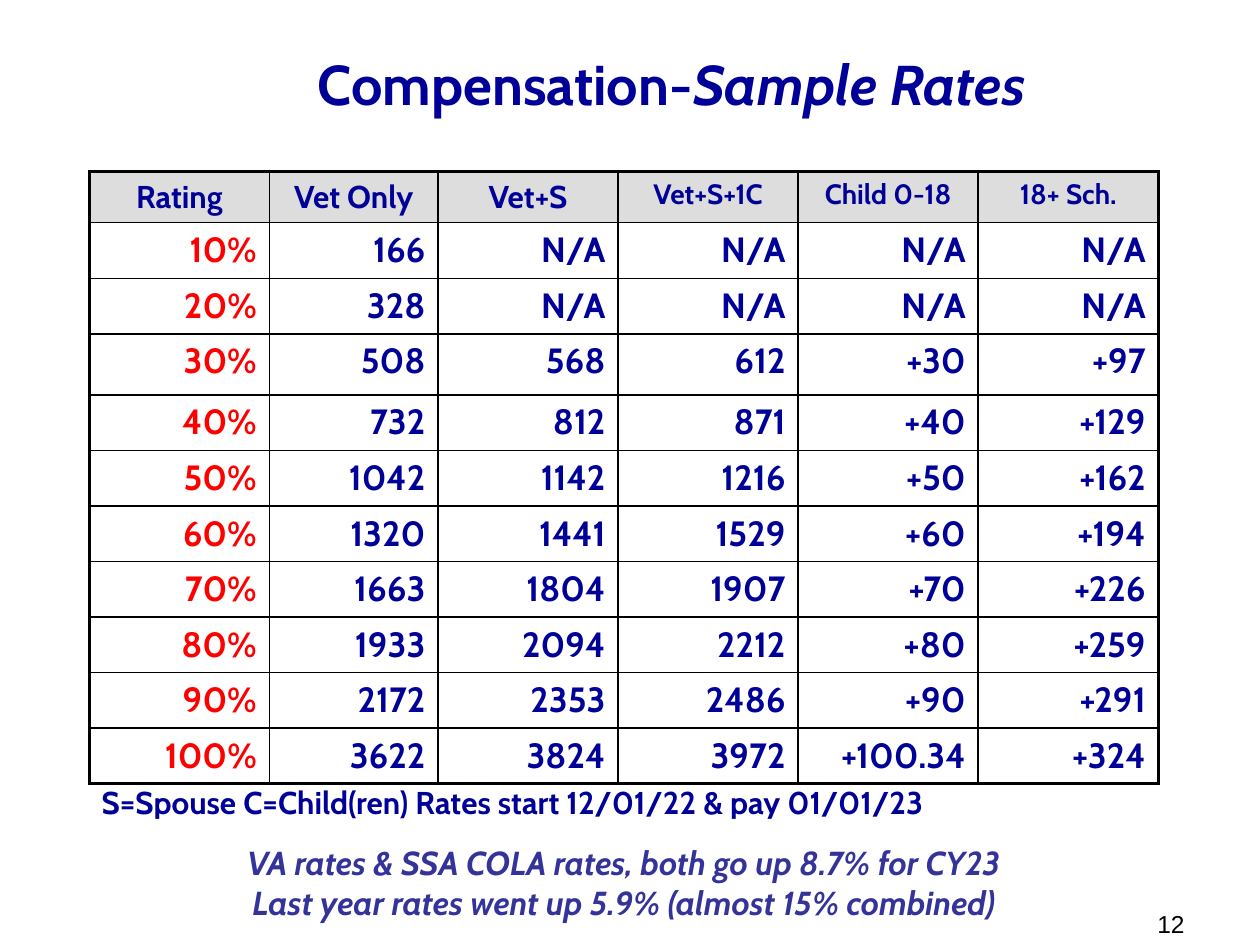
"""Build the compensation sample rates slide."""
from lxml.etree import SubElement
from pptx import Presentation
from pptx.dml.color import RGBColor
from pptx.enum.shapes import MSO_SHAPE as SHAPE
from pptx.enum.text import MSO_ANCHOR as ANCHOR, PP_ALIGN as ALIGN
from pptx.oxml.ns import qn
from pptx.util import Cm, Pt

NAVY = RGBColor(0x00, 0x00, 0x99)
INDIGO = RGBColor(0x33, 0x33, 0x99)
RED = RGBColor(0xFF, 0x00, 0x00)
GRAY = RGBColor(0xDD, 0xDD, 0xDD)
WHITE = RGBColor(0xFF, 0xFF, 0xFF)
BLACK = RGBColor(0x00, 0x00, 0x00)

THIN, THICK = 1, 2.25
LEFT = 1.8
COL_WIDTHS = [3.63, 3.4, 3.63, 3.63, 3.63, 3.63]
ROW_HEIGHTS = [1.03, 1.12, 1.12, 1.23] + [1.12] * 7
HEADER = ["Rating", "Vet Only", "Vet+S", "Vet+S+1C", "Child 0-18", "18+ Sch."]
HEADER_SIZES = [18, 18, 18, 16, 16, 16]
RATES = [
    ["10%", "166", "N/A", "N/A", "N/A", "N/A"],
    ["20%", "328", "N/A", "N/A", "N/A", "N/A"],
    ["30%", "508", "568", "612", "+30", "+97"],
    ["40%", "732", "812", "871", "+40", "+129"],
    ["50%", "1042", "1142", "1216", "+50", "+162"],
    ["60%", "1320", "1441", "1529", "+60", "+194"],
    ["70%", "1663", "1804", "1907", "+70", "+226"],
    ["80%", "1933", "2094", "2212", "+80", "+259"],
    ["90%", "2172", "2353", "2486", "+90", "+291"],
    ["100%", "3622", "3824", "3972", "+100.34", "+324"],
]


def add_run(p, text, size, color, bold=True, italic=False, font="Cabin"):
    r = p.add_run()
    r.text = text
    r.font.name = font
    r.font.size = Pt(size)
    r.font.bold = bold
    r.font.italic = italic
    r.font.color.rgb = color


def add_textbox(s, left, top, width, height, align=ALIGN.LEFT):
    tf = s.shapes.add_textbox(Cm(left), Cm(top), Cm(width), Cm(height)).text_frame
    tf.word_wrap = True
    p = tf.paragraphs[0]
    p.alignment = align
    return p


def set_borders(cell, widths):
    tc_pr = cell._tc.get_or_add_tcPr()
    for i, (side, width) in enumerate(zip("LRTB", widths)):
        ln = SubElement(tc_pr, qn(f"a:ln{side}"), w=str(Pt(width)))
        fill = SubElement(ln, qn("a:solidFill"))
        SubElement(fill, qn("a:srgbClr"), val=str(BLACK))
        tc_pr.insert(i, ln)


def fill_cell(cell, text, row, col):
    p = cell.text_frame.paragraphs[0]
    if row == 0:
        cell.fill.solid()
        cell.fill.fore_color.rgb = GRAY
        p.alignment = ALIGN.CENTER
        add_run(p, text, HEADER_SIZES[col], NAVY)
    else:
        cell.fill.background()
        p.alignment = ALIGN.RIGHT
        add_run(p, text, 20, RED if col == 0 else NAVY)
    edges = [col == 0, col == len(HEADER) - 1, row == 0, row == len(RATES)]
    set_borders(cell, [THICK if edge else THIN for edge in edges])


def add_rates_table(s):
    rows = [HEADER] + RATES
    table = s.shapes.add_table(len(rows), len(HEADER), Cm(LEFT), Cm(3.46),
                               Cm(sum(COL_WIDTHS)), Cm(sum(ROW_HEIGHTS))).table
    for column, width in zip(table.columns, COL_WIDTHS):
        column.width = Cm(width)
    for i, (height, texts) in enumerate(zip(ROW_HEIGHTS, rows)):
        table.rows[i].height = Cm(height)
        for j, text in enumerate(texts):
            fill_cell(table.cell(i, j), text, i, j)


def add_note_panel(s, lines):
    sp = s.shapes.add_shape(SHAPE.RECTANGLE, Cm(LEFT), Cm(16.51), Cm(21.56), Cm(2.21))
    sp.shadow.inherit = False
    sp.fill.solid()
    sp.fill.fore_color.rgb = WHITE
    sp.line.fill.background()
    tf = sp.text_frame
    tf.word_wrap = True
    tf.vertical_anchor = ANCHOR.BOTTOM
    for i, line in enumerate(lines):
        p = tf.add_paragraph() if i else tf.paragraphs[0]
        p.alignment = ALIGN.CENTER
        add_run(p, line, 19, INDIGO, italic=True)


def main():
    prs = Presentation()
    prs.slide_width, prs.slide_height = Cm(25.4), Cm(19.05)
    s = prs.slides.add_slide(prs.slide_layouts[6])

    add_rates_table(s)

    title = add_textbox(s, 4.65, 0.88, 17.78, 1.9, ALIGN.CENTER)
    add_run(title, "Compensation-", 32, NAVY)
    add_run(title, "Sample Rates", 32, NAVY, italic=True)

    legend = add_textbox(s, LEFT, 15.67, 21.79, 1.02)
    add_run(legend, "S=Spouse C=Child(ren) Rates start 12/01/22 & pay 01/01/23", 18, NAVY)

    add_note_panel(s, ["VA rates & SSA COLA rates, both go up 8.7% for CY23",
                       "Last year rates went up 5.9% (almost 15% combined)"])

    number = add_textbox(s, 23.06, 18.21, 1.07, 0.46, ALIGN.RIGHT)
    add_run(number, "12", 14, BLACK, bold=False, font="Arial")

    prs.save("out.pptx")


if __name__ == "__main__":
    main()
